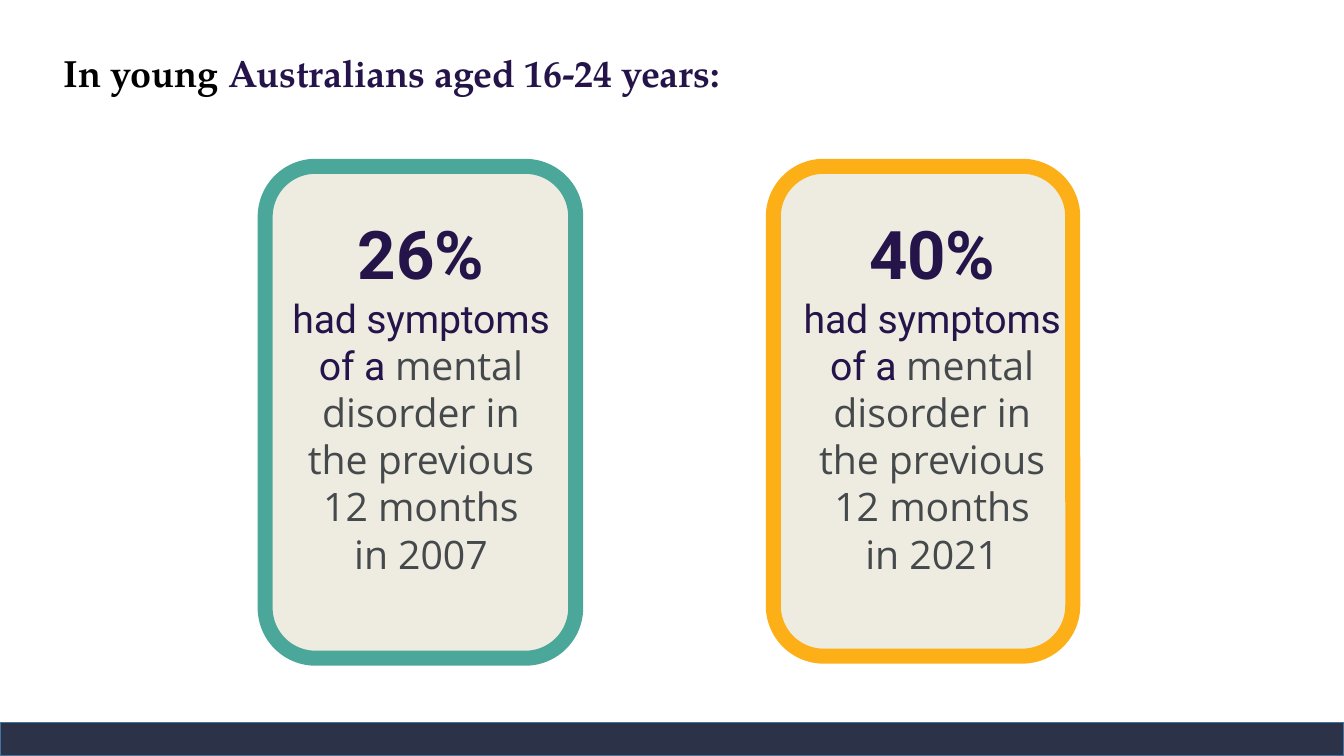
from pptx import Presentation
from pptx.dml.color import RGBColor
from pptx.enum.shapes import MSO_SHAPE as Shape
from pptx.enum.text import MSO_ANCHOR as Anchor, MSO_AUTO_SIZE as AutoSize, PP_ALIGN as Align
from pptx.util import Inches, Pt

INK = RGBColor(0x24, 0x14, 0x49)
GREY = RGBColor(0x45, 0x49, 0x4B)
BLACK = RGBColor(0, 0, 0)
CREAM = RGBColor(0xEE, 0xEC, 0xE1)
TEAL = RGBColor(0x4B, 0xA7, 0x9A)
AMBER = RGBColor(0xFC, 0xAF, 0x17)
NAVY = RGBColor(0x2C, 0x33, 0x49)
BLUE = RGBColor(0x43, 0x73, 0x9E)

# Text formats: font values, and letter spacing in hundredths of a point
HEADING = dict(name="TeX Gyre Pagella", size=Pt(27), bold=True)
FIGURE = dict(name="Roboto", size=Pt(47.9), bold=True)
LEAD = dict(name="Roboto", size=Pt(28), bold=False)
BODY = dict(name="Open Sans", size=Pt(28), bold=False)
TIGHT = -10

# Content: each paragraph is a list of (text, format, colour, spacing)
TITLE = [[("In young ", HEADING, BLACK, 0),
          ("Australians aged 16-24 years:", HEADING, INK, TIGHT)]]
# share, year, border colour, card (left, width, height), text left
CARDS = [
    ("26%", "2007", TEAL, (2.63, 3.08, 4.88), 2.88),
    ("40%", "2021", AMBER, (7.67, 2.97, 4.86), 7.95),
]
CARD_TOP, CORNER = 1.65, 0.5
TEXT_TOP, TEXT_WIDTH, TEXT_HEIGHT = 2.1, 2.59, 3.67


def card_text(share, year):
    return [
        [(share, FIGURE, INK, TIGHT)],
        [("had symptoms of a ", LEAD, INK, TIGHT),
         ("mental disorder in the previous 12 months", BODY, GREY, 0)],
        [(f"in {year}", BODY, GREY, 0)],
    ]


def write(frame, paragraphs, align):
    frame.word_wrap = True
    frame.auto_size = AutoSize.NONE
    frame.vertical_anchor = Anchor.TOP
    frame.margin_left = frame.margin_right = frame.margin_bottom = 0
    frame.margin_top = Inches(0.01)
    for index, runs in enumerate(paragraphs):
        paragraph = frame.add_paragraph() if index else frame.paragraphs[0]
        paragraph.alignment = align
        paragraph.space_before = Pt(0.6 if index else 0)
        for text, font_format, colour, spacing in runs:
            run = paragraph.add_run()
            run.text = text
            for key, value in font_format.items():
                setattr(run.font, key, value)
            run.font.color.rgb = colour
            run._r.get_or_add_rPr().set("spc", str(spacing))


def add_block(slide, kind, box, fill, line, weight):
    shape = slide.shapes.add_shape(kind, *map(Inches, box))
    shape.shadow.inherit = False
    shape.fill.solid()
    shape.fill.fore_color.rgb = fill
    shape.line.color.rgb = line
    shape.line.width = Pt(weight)
    return shape


def main():
    presentation = Presentation()
    presentation.slide_width = Inches(13.33)
    presentation.slide_height = Inches(7.5)
    slide = presentation.slides.add_slide(presentation.slide_layouts[5])

    # Title
    title = slide.shapes.title
    title.left, title.top = Inches(0.63), Inches(0.48)
    title.width, title.height = Inches(7.25), Inches(0.46)
    write(title.text_frame, TITLE, Align.LEFT)

    # Cards
    for share, year, colour, (left, width, height), text_left in CARDS:
        card = add_block(slide, Shape.ROUNDED_RECTANGLE,
                         (left, CARD_TOP, width, height), CREAM, colour, 10.72)
        card.adjustments[0] = CORNER / width
        text_box = slide.shapes.add_textbox(
            *map(Inches, (text_left, TEXT_TOP, TEXT_WIDTH, TEXT_HEIGHT)))
        write(text_box.text_frame, card_text(share, year), Align.CENTER)

    # Footer band
    add_block(slide, Shape.RECTANGLE, (0, 7.17, 13.33, 0.33), NAVY, BLUE, 1)

    presentation.save("out.pptx")


if __name__ == "__main__":
    main()
